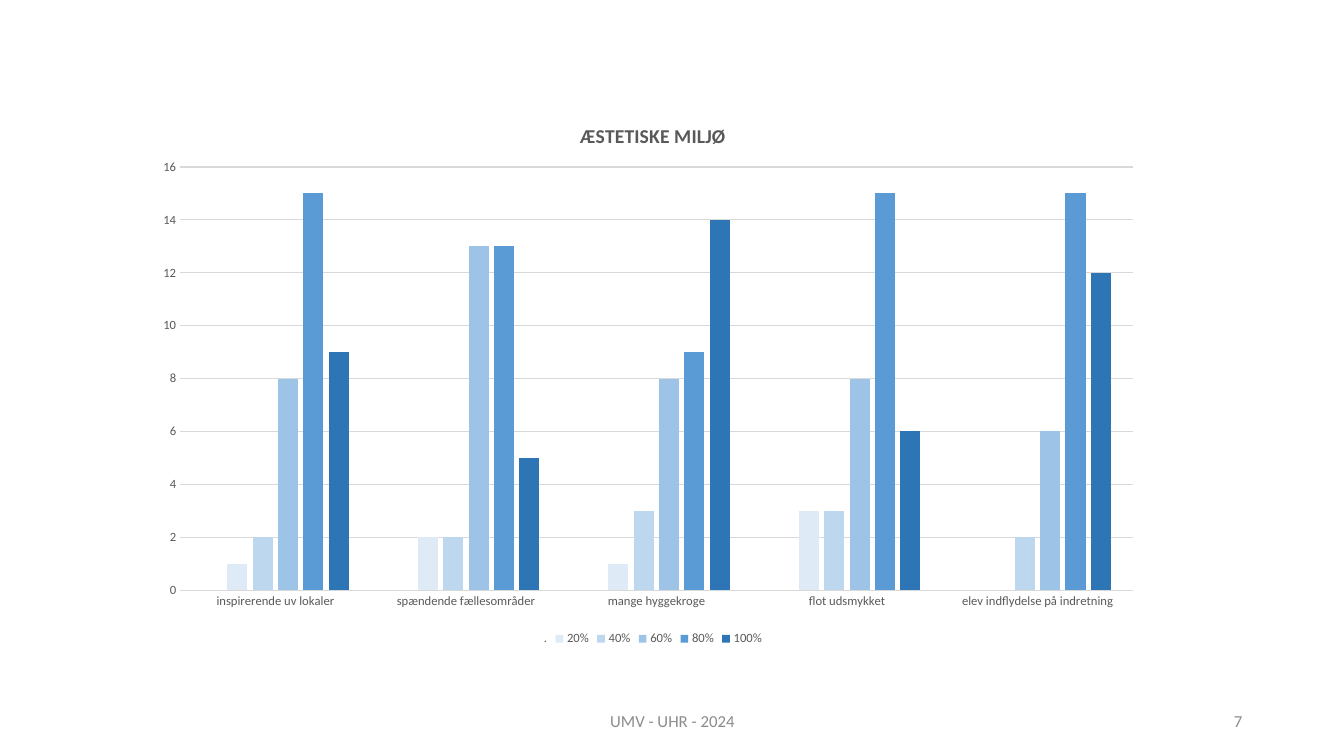
from dataclasses import dataclass

from lxml import etree
from pptx import Presentation
from pptx import util as u
from pptx.chart import data as cdata
from pptx.dml.color import RGBColor
from pptx.enum import chart as ch, text as tx
from pptx.oxml.ns import qn

FONT = "Calibri"
WHITE = RGBColor(0xFF, 0xFF, 0xFF)
DARK = RGBColor(0x59, 0x59, 0x59)
GREY = RGBColor(0x8C, 0x8C, 0x8C)
GRID = RGBColor(0xD9, 0xD9, 0xD9)
ICE = RGBColor(0xDE, 0xEB, 0xF7)
PALE = RGBColor(0xBD, 0xD7, 0xEE)
LIGHT = RGBColor(0x9D, 0xC3, 0xE6)
BLUE = RGBColor(0x5B, 0x9B, 0xD5)
DEEP = RGBColor(0x2E, 0x75, 0xB6)


@dataclass
class Rating:
    name: str
    votes: tuple
    color: RGBColor


@dataclass
class Label:
    text: str
    left: float
    width: float
    align: tx.PP_ALIGN


TOPICS = (
    "inspirerende uv lokaler",
    "spændende fællesområder",
    "mange hyggekroge",
    "flot udsmykket",
    "elev indflydelse på indretning",
)
RATINGS = (
    Rating(".", (None,) * len(TOPICS), WHITE),
    Rating("20%", (1, 2, 1, 3, 0), ICE),
    Rating("40%", (2, 2, 3, 3, 2), PALE),
    Rating("60%", (8, 13, 8, 8, 6), LIGHT),
    Rating("80%", (15, 13, 9, 15, 15), BLUE),
    Rating("100%", (9, 5, 14, 6, 12), DEEP),
)
LABELS = (
    Label("UMV - UHR - 2024", 4.42, 4.5, tx.PP_ALIGN.CENTER),
    Label("7", 9.42, 3, tx.PP_ALIGN.RIGHT),
)


def style(font, size: float, color: RGBColor, bold: bool = False) -> None:
    font.name = FONT
    font.size = u.Pt(size)
    font.bold = bold
    font.color.rgb = color


def write(frame, words: str, *, size: float, color: RGBColor,
          bold: bool = False, align=tx.PP_ALIGN.CENTER) -> None:
    para = frame.paragraphs[0]
    para.alignment = align
    run = para.add_run()
    run.text = words
    style(run.font, size, color, bold)


def rule(line) -> None:
    line.color.rgb = GRID
    line.width = u.Pt(0.75)


def place(part, spot: int, **marks) -> None:
    """Give a chart part a manual layout."""
    old = part.find(qn("c:layout"))
    if old is not None:
        part.remove(old)
    layout = etree.Element(qn("c:layout"))
    manual = etree.SubElement(layout, qn("c:manualLayout"))
    for tag, val in marks.items():
        etree.SubElement(manual, qn(f"c:{tag}")).set("val", str(val))
    part.insert(spot, layout)


def draw_label(slide, label: Label) -> None:
    box = slide.shapes.add_textbox(u.Inches(label.left), u.Inches(6.95),
                                   u.Inches(label.width), u.Inches(0.4))
    frame = box.text_frame
    frame.word_wrap = True
    frame.vertical_anchor = tx.MSO_ANCHOR.MIDDLE
    write(frame, label.text, size=12, color=GREY, align=label.align)


def draw_chart(slide) -> None:
    data = cdata.CategoryChartData()
    data.categories = TOPICS
    for rating in RATINGS:
        data.add_series(rating.name, rating.votes)
    chart = slide.shapes.add_chart(
        ch.XL_CHART_TYPE.COLUMN_CLUSTERED, u.Inches(1.41), u.Inches(0.96),
        u.Inches(10.02), u.Inches(5.49), data).chart
    style(chart.font, 10, DARK)

    # Title
    chart.has_title = True
    title = chart.chart_title
    write(title.text_frame, "ÆSTETISKE MILJØ", size=14, color=DARK, bold=True)
    place(title._element, 1, xMode="edge", yMode="edge", x=0.43, y=0.04)

    # Columns
    plot = chart.plots[0]
    plot.gap_width = 219
    plot.overlap = -27
    plot.vary_by_categories = False
    for series, rating in zip(plot.series, RATINGS):
        series.invert_if_negative = False
        series.format.fill.solid()
        series.format.fill.fore_color.rgb = rating.color
    place(chart._chartSpace.chart.plotArea, 0, layoutTarget="inner",
          xMode="edge", yMode="edge", x=0.0376, y=0.127, w=0.943, h=0.765)

    # Axes
    for axis in (chart.category_axis, chart.value_axis):
        axis.major_tick_mark = ch.XL_TICK_MARK.NONE
        axis.minor_tick_mark = ch.XL_TICK_MARK.NONE
        style(axis.tick_labels.font, 9, DARK)
    rule(chart.category_axis.format.line)
    scale = chart.value_axis
    scale.minimum_scale, scale.maximum_scale, scale.major_unit = 0, 16, 2
    scale.format.line.fill.background()
    scale.has_major_gridlines = True
    rule(scale.major_gridlines.format.line)

    # Legend
    chart.has_legend = True
    chart.legend.position = ch.XL_LEGEND_POSITION.BOTTOM
    chart.legend.include_in_layout = False
    style(chart.legend.font, 9, DARK)


def main() -> None:
    deck = Presentation()
    deck.slide_width = u.Inches(13.33)
    deck.slide_height = u.Inches(7.5)
    slide = deck.slides.add_slide(deck.slide_layouts[6])
    for label in LABELS:
        draw_label(slide, label)
    draw_chart(slide)
    deck.save("out.pptx")


if __name__ == "__main__":
    main()
